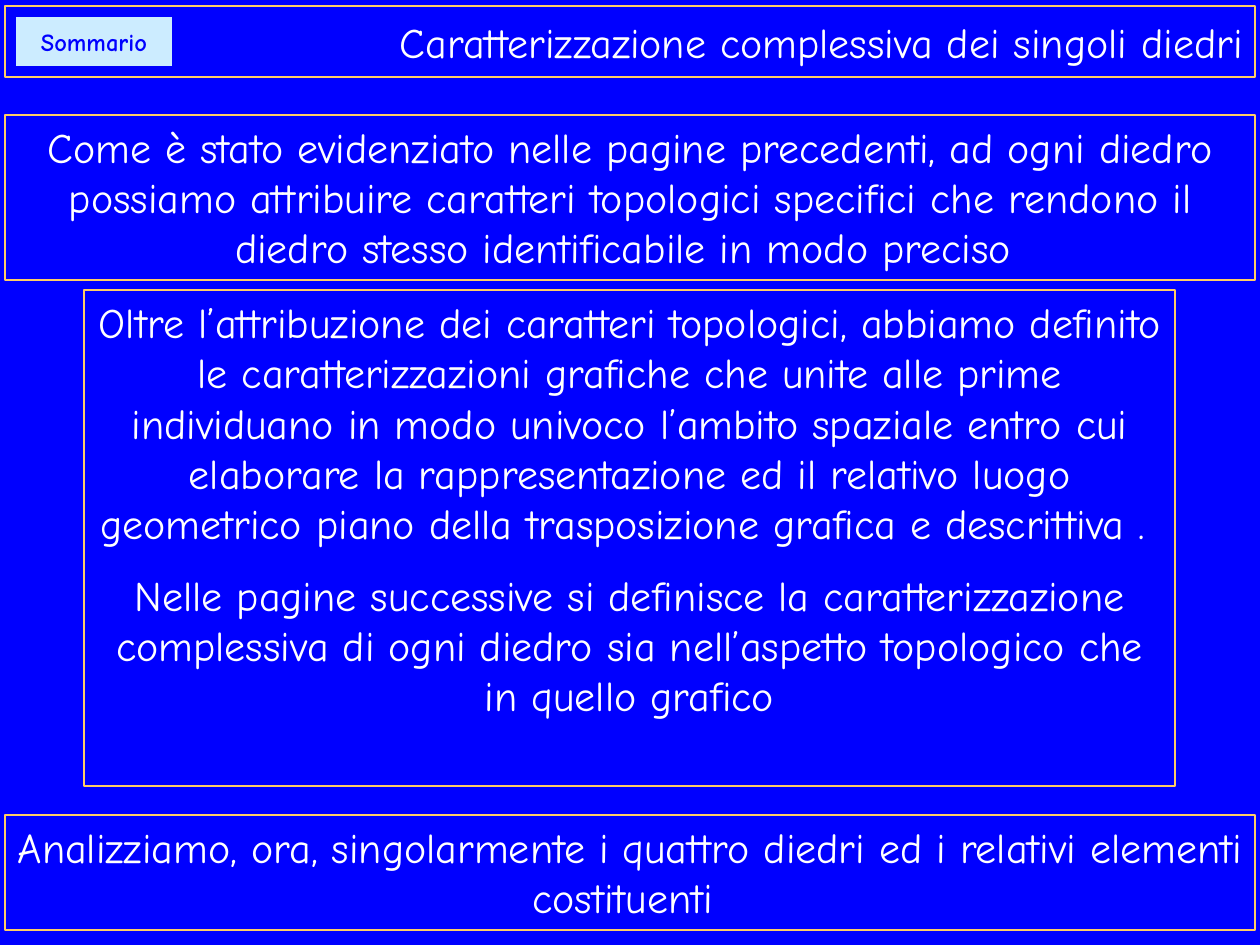
"""Build the summary slide on the overall characterisation of the dihedra."""
from pptx import Presentation
from pptx import util as u
from pptx.dml.color import RGBColor
from pptx.enum import shapes, text

PX = 914400 / 126
WIDTH, HEIGHT = 1260, 945
BLUE, WHITE, GOLD, PALE = "0000FF", "FFFFFF", "FFCC66", "CCECFF"
FONT = "Comic Neue"
RIGHT, CENTER = text.PP_ALIGN.RIGHT, text.PP_ALIGN.CENTER
TOP, MIDDLE = text.MSO_ANCHOR.TOP, text.MSO_ANCHOR.MIDDLE

PANELS = [
    ((5, 6, 1250, 71), RIGHT, MIDDLE,
     ["Caratterizzazione complessiva dei singoli diedri"]),
    ((5, 115, 1250, 165), CENTER, TOP,
     ["Come è stato evidenziato nelle pagine precedenti, ad ogni diedro "
      "possiamo attribuire caratteri topologici specifici che rendono il "
      "diedro stesso identificabile in modo preciso "]),
    ((84, 290, 1091, 496), CENTER, TOP,
     ["Oltre l’attribuzione dei caratteri topologici, abbiamo definito le "
      "caratterizzazioni grafiche che unite alle prime individuano in modo "
      "univoco l’ambito spaziale entro cui elaborare la rappresentazione ed "
      "il relativo luogo geometrico piano della trasposizione grafica e "
      "descrittiva . ",
      "Nelle pagine successive si definisce la caratterizzazione complessiva "
      "di ogni diedro sia nell’aspetto topologico che in quello grafico"]),
    ((5, 815, 1250, 115), CENTER, TOP,
     ["Analizziamo, ora, singolarmente i quattro diedri ed i relativi "
      "elementi costituenti "]),
]
BUTTON = ((16, 17, 156, 49), "Sommario")


def px(length):
    return u.Emu(round(length * PX))


def color(value):
    return RGBColor.from_string(value)


def write(box, lines, align, anchor, size, ink, bold=False):
    frame = box.text_frame
    frame.word_wrap = True
    frame.vertical_anchor = anchor
    frame.text = "\n".join(lines)
    for index, para in enumerate(frame.paragraphs):
        para.alignment = align
        para.space_before = u.Pt(size / 2 if index else 0)
        para.font.name = FONT
        para.font.size = u.Pt(size)
        para.font.bold = bold
        para.font.color.rgb = color(ink)


def add_panel(page, place, align, anchor, lines):
    box = page.shapes.add_textbox(*map(px, place))
    box.line.color.rgb = color(GOLD)
    box.line.width = u.Pt(0.75)
    write(box, lines, align, anchor, 24, WHITE)


def add_button(page, place, label):
    button = page.shapes.add_shape(
        shapes.MSO_SHAPE.ACTION_BUTTON_CUSTOM, *map(px, place))
    button.shadow.inherit = False
    button.fill.solid()
    button.fill.fore_color.rgb = color(PALE)
    button.line.fill.background()
    write(button, [label], CENTER, MIDDLE, 14, BLUE, bold=True)


def main():
    deck = Presentation()
    deck.slide_width, deck.slide_height = px(WIDTH), px(HEIGHT)
    page = deck.slides.add_slide(deck.slide_layouts[6])
    page.background.fill.solid()
    page.background.fill.fore_color.rgb = color(BLUE)
    for panel in PANELS:
        add_panel(page, *panel)
    add_button(page, *BUTTON)
    deck.save("out.pptx")


if __name__ == "__main__":
    main()
